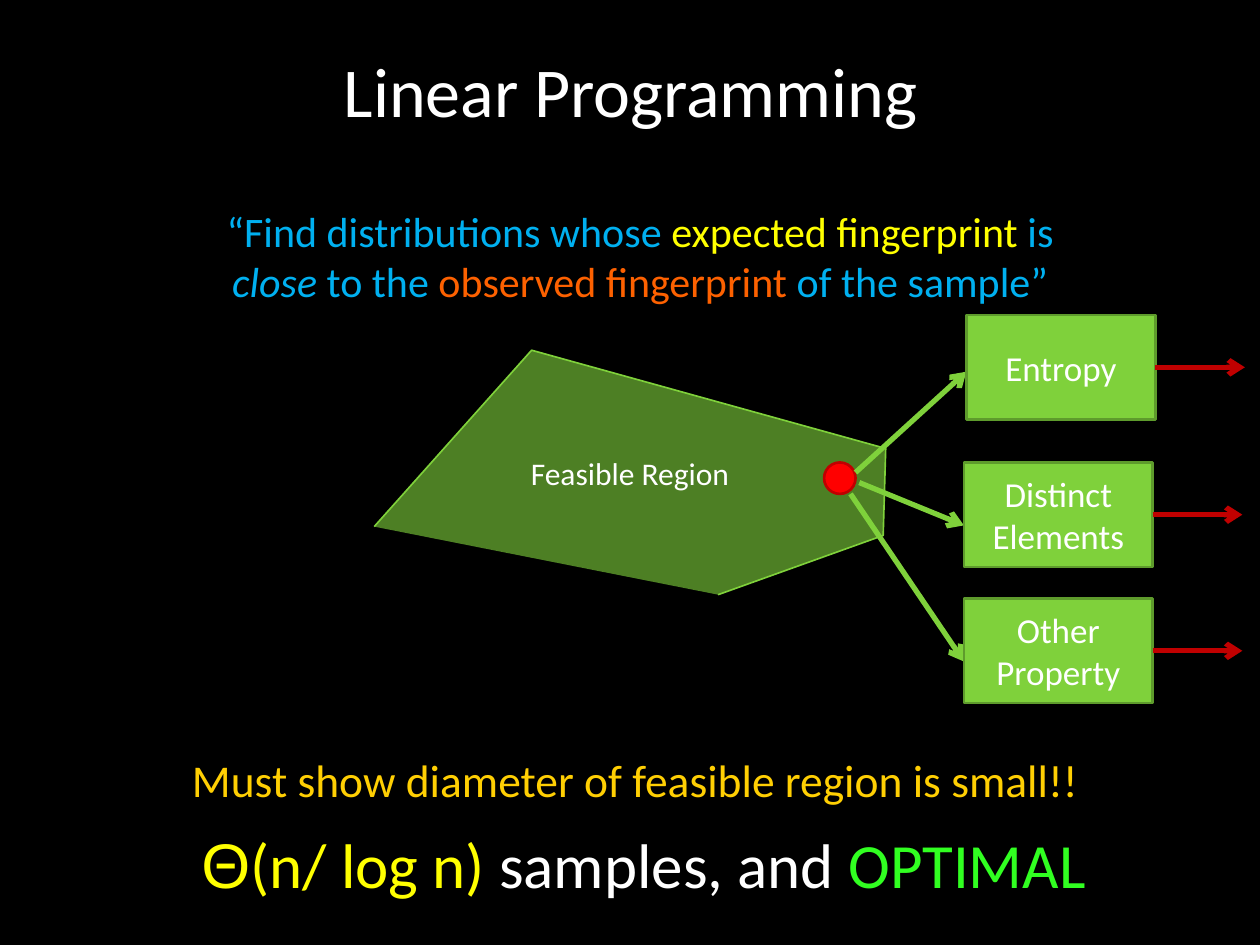
from lxml import etree
from pptx import Presentation
from pptx.dml.color import RGBColor
from pptx.enum.shapes import MSO_CONNECTOR, MSO_SHAPE
from pptx.enum.text import MSO_ANCHOR, PP_ALIGN
from pptx.oxml.ns import qn
from pptx.util import Inches, Pt

CENTER, LEFT = PP_ALIGN.CENTER, PP_ALIGN.LEFT
MIDDLE, TOP = MSO_ANCHOR.MIDDLE, MSO_ANCHOR.TOP
STRAIGHT = MSO_CONNECTOR.STRAIGHT
RECT, OVAL = MSO_SHAPE.RECTANGLE, MSO_SHAPE.OVAL
WHITE, YELLOW, BLUE = "FFFFFF", "FFFF00", "00B0F0"
GREEN, DARK_GREEN, RED = "7FD13B", "5E9B2C", "C00000"
rgb = RGBColor.from_string


def write(sp, size, runs, anchor=TOP, align=CENTER):
    """Fill a shape with one paragraph of (text, colour, font, italic) runs."""
    tf = sp.text_frame
    tf.word_wrap = True
    tf.vertical_anchor = anchor
    p = tf.paragraphs[0]
    p.alignment = align
    for text, color, font, italic in runs:
        r = p.add_run()
        r.text = text
        r.font.size = Pt(size)
        r.font.name = font
        r.font.italic = italic
        r.font.color.rgb = rgb(color)


def add_arrow(shapes, start, end, color):
    x1, y1, x2, y2 = (Inches(v) for v in start + end)
    line = shapes.add_connector(STRAIGHT, x1, y1, x2, y2)
    line.line.color.rgb = rgb(color)
    line.line.width = Pt(3)
    etree.SubElement(line.line._get_or_add_ln(), qn("a:tailEnd"), type="arrow")
    etree.SubElement(line._element.spPr, qn("a:effectLst"))
    return line


prs = Presentation()
prs.slide_width, prs.slide_height = Inches(10), Inches(7.5)
s = prs.slides.add_slide(prs.slide_layouts[5])
s.background.fill.solid()
s.background.fill.fore_color.rgb = rgb("000000")

# Title
title = s.shapes.title
title.left, title.top = Inches(1.88), Inches(0.33)
title.width, title.height = Inches(6.25), Inches(0.77)
write(title, 40, [("Linear Programming", WHITE, "Calibri", False)])

# Goal of the program
goal = s.shapes.add_textbox(Inches(1.33), Inches(1.58), Inches(7.5), Inches(0.91))
write(goal, 24, [
    ("“Find distributions whose ", BLUE, "Calibri", False),
    ("expected fingerprint ", YELLOW, "Calibri", False),
    ("is ", BLUE, "Calibri", False),
    ("close", BLUE, "Calibri", True),
    (" to the ", BLUE, "Calibri", False),
    ("observed fingerprint", "FD6100", "Calibri", False),
    (" of the sample”", BLUE, "Calibri", False),
])

# Feasible region, outlined on every side but the last
corners = [(2.97, 4.18), (4.22, 2.78), (7.03, 3.56), (7.01, 4.25), (5.7, 4.72)]
points = [(Inches(x), Inches(y)) for x, y in corners]
builder = s.shapes.build_freeform(*points[0])
builder.add_line_segments(points[1:], close=False)
region = builder.convert_to_shape()
region.shadow.inherit = False
region.fill.solid()
region.fill.fore_color.rgb = rgb(GREEN)
fill_color = region._element.spPr.find(qn("a:solidFill"))[0]
etree.SubElement(fill_color, qn("a:alpha"), val="61000")
region.line.color.rgb = rgb(GREEN)
region.line.width = Pt(0.94)
write(region, 18, [("Feasible Region", WHITE, "Calibri", False)], MIDDLE)

# Conclusion below the region
note = s.shapes.add_textbox(Inches(1.17), Inches(5.92), Inches(7.75), Inches(0.54))
write(note, 26, [("Must show diameter of feasible region is small!!",
                  "FFCF03", "Calibri", False)])

# Chosen point in the region
dot = s.shapes.add_shape(OVAL, Inches(6.54), Inches(3.67), Inches(0.25), Inches(0.25))
dot.shadow.inherit = False
dot.fill.solid()
dot.fill.fore_color.rgb = rgb("FF0000")
dot.line.color.rgb = rgb(RED)
dot.line.width = Pt(1.5)

# Properties computed from the chosen point: name, box corner, arrow start, arrow end
properties = [
    ("Entropy", (7.67, 2.5), (6.79, 3.75), (7.67, 2.95)),
    ("Distinct Elements", (7.65, 3.67), (6.82, 3.83), (7.65, 4.17)),
    ("Other Property", (7.65, 4.75), (6.75, 3.92), (7.65, 5.25)),
]
box_w, box_h, output_length = 1.5, 0.83, 0.71
for name, (x, y), start, end in properties:
    shapes = s.shapes.add_group_shape().shapes
    add_arrow(shapes, start, end, GREEN)
    box = shapes.add_shape(RECT, Inches(x), Inches(y), Inches(box_w), Inches(box_h))
    box.shadow.inherit = False
    box.fill.solid()
    box.fill.fore_color.rgb = rgb(GREEN)
    box.line.color.rgb = rgb(DARK_GREEN)
    box.line.width = Pt(1.5)
    write(box, 20, [(name, WHITE, "Calibri", False)], MIDDLE)
    right, mid = x + box_w, y + box_h / 2
    output = add_arrow(shapes, (right, mid), (right + output_length, mid), RED)
    output.begin_connect(box, 3)

# Sample bound
bound = s.shapes.add_textbox(Inches(1.5), Inches(6.5), Inches(7.6), Inches(0.71))
write(bound, 36, [
    ("Θ", YELLOW, "Arial", False),
    ("(n/ log n) ", YELLOW, "Calibri", False),
    ("samples, and ", WHITE, "Calibri", False),
    ("OPTIMAL", "31FF21", "Calibri", False),
], align=LEFT)
bound.text_frame.word_wrap = False

prs.save("out.pptx")
